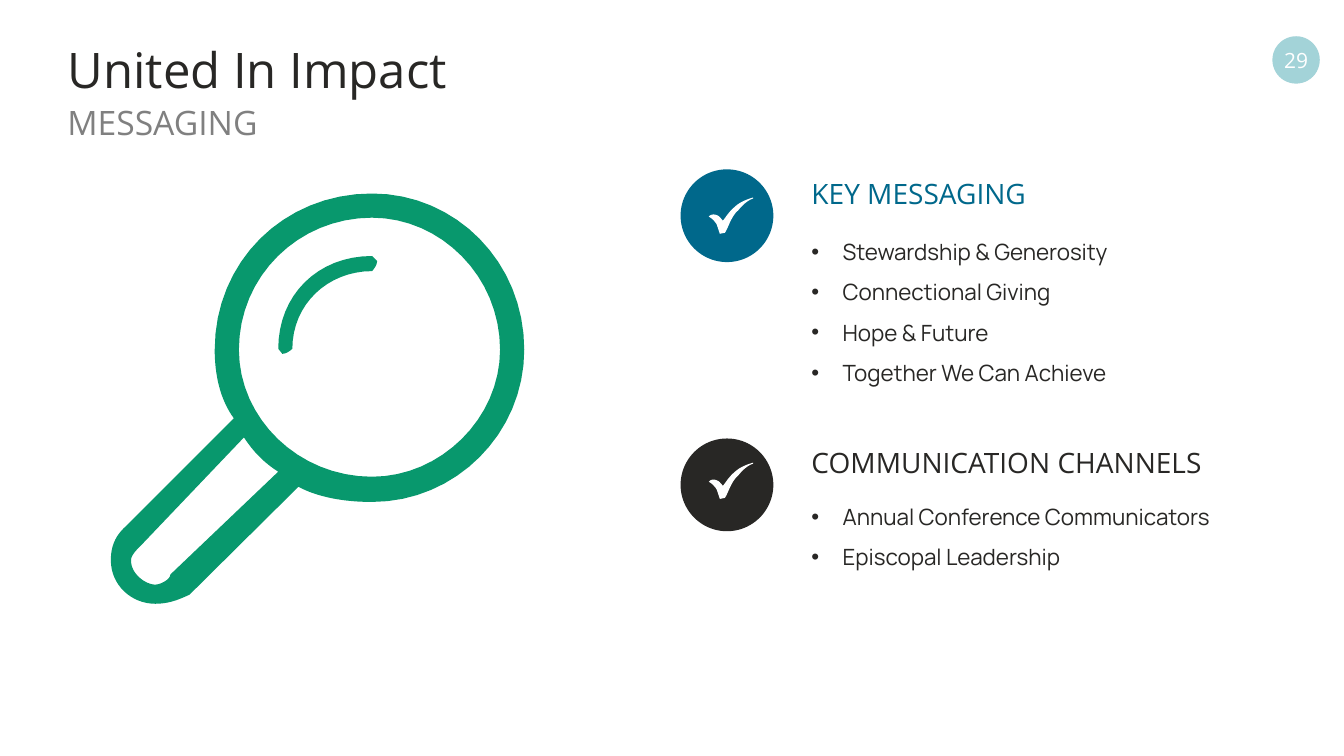
import pptx
import pptx.util
import pptx.dml.color
import pptx.enum.shapes
import pptx.enum.text
import pptx.oxml.ns
import lxml.etree

Inches = pptx.util.Inches
Pt = pptx.util.Pt
RGB = pptx.dml.color.RGBColor
ALIGN = pptx.enum.text.PP_ALIGN
ANCHOR = pptx.enum.text.MSO_ANCHOR
OVAL = pptx.enum.shapes.MSO_SHAPE.OVAL

INK = RGB(0x28, 0x27, 0x25)
BLUE = RGB(0x00, 0x68, 0x8B)
GREEN = RGB(0x08, 0x98, 0x6D)
GREY = RGB(0x80, 0x80, 0x80)
AQUA = RGB(0xA3, 0xD3, 0xD8)
WHITE = RGB(0xFF, 0xFF, 0xFF)

RIM = [
    (2.59, 0), (1.71, 0, 1.03, 0.68, 1.03, 1.55),
    (1.03, 1.79, 1.08, 2.04, 1.22, 2.23), (0.15, 3.3),
    (0.05, 3.39, 0, 3.49, 0, 3.64), (0, 3.88, 0.2, 4.07, 0.44, 4.07),
    (0.59, 4.07, 0.69, 4.02, 0.78, 3.98), (1.86, 2.91),
    (2.05, 3.01, 2.3, 3.06, 2.59, 3.06), (3.42, 3.06, 4.1, 2.38, 4.1, 1.55),
    (4.1, 0.68, 3.42, 0, 2.59, 0),
]
GRIP = [
    (0.59, 3.78), (0.59, 3.83, 0.49, 3.88, 0.44, 3.88),
    (0.35, 3.88, 0.2, 3.78, 0.2, 3.64), (0.2, 3.59, 0.25, 3.54, 0.3, 3.49),
    (1.32, 2.42), (1.42, 2.57, 1.52, 2.67, 1.66, 2.76),
]
LENS = [
    (2.59, 2.81), (1.86, 2.81, 1.27, 2.23, 1.27, 1.55),
    (1.27, 0.82, 1.86, 0.24, 2.59, 0.24), (3.27, 0.24, 3.86, 0.82, 3.86, 1.55),
    (3.86, 2.23, 3.27, 2.81, 2.59, 2.81),
]
SHINE = [
    (2.59, 0.62), (2.05, 0.62, 1.66, 1.01, 1.66, 1.54), (1.7, 1.59),
    (1.75, 1.59, 1.8, 1.54, 1.8, 1.54), (1.8, 1.1, 2.15, 0.77, 2.59, 0.77),
    (2.59, 0.77, 2.64, 0.72, 2.64, 0.67), (2.59, 0.62),
]
TICK = [
    (0.09, 0.18), (0.07, 0.17, 0.04, 0.16, 0.01, 0.18), (0, 0.19),
    (0.04, 0.21, 0.07, 0.25, 0.08, 0.27), (0.09, 0.3, 0.1, 0.33, 0.11, 0.36),
    (0.16, 0.35), (0.18, 0.32, 0.19, 0.29, 0.2, 0.27),
    (0.22, 0.22, 0.26, 0.15, 0.29, 0.13), (0.33, 0.08, 0.38, 0.03, 0.44, 0.01),
    (0.44, 0), (0.37, 0.02, 0.3, 0.05, 0.25, 0.1),
    (0.2, 0.14, 0.16, 0.21, 0.14, 0.23), (0.13, 0.22, 0.11, 0.19, 0.09, 0.18),
]


def put(item, values):
    """Set each named value on an object."""
    for name, value in values.items():
        setattr(item, name, value)


def paint(shape, color):
    """Give a shape a flat fill with no line or shadow."""
    shape.fill.solid()
    shape.fill.fore_color.rgb = color
    shape.line.fill.background()
    shape.shadow.inherit = False


def trace(steps, count=16):
    """Turn line and curve steps into a list of points."""
    points = [steps[0]]
    for step in steps[1:]:
        if len(step) == 2:
            points.append(step)
            continue
        ends = [points[-1], step[:2], step[2:4], step[4:]]
        for i in range(1, count + 1):
            t = i / count
            parts = ((1 - t) ** 3, 3 * t * (1 - t) ** 2, 3 * t * t * (1 - t), t ** 3)
            points.append(tuple(sum(w * p[k] for w, p in zip(parts, ends)) for k in (0, 1)))
    return points


def draw(slide, left, top, rings, color):
    """Draw closed rings as one filled outline."""
    paths = [[(Inches(left + x), Inches(top + y)) for x, y in trace(ring)] for ring in rings]
    build = slide.shapes.build_freeform(*paths[0][0])
    for i, points in enumerate(paths):
        if i:
            build.move_to(*points[0])
        build.add_line_segments(points[1:], close=True)
    paint(build.convert_to_shape(), color)


def disc(slide, left, top, size, color):
    """Add a filled circle."""
    shape = slide.shapes.add_shape(OVAL, *map(Inches, (left, top, size, size)))
    paint(shape, color)
    return shape


def write(frame, lines, size, color, font="Open Sans", **layout):
    """Fill a text frame with formatted paragraphs."""
    put(frame, {"word_wrap": True, "auto_size": pptx.enum.text.MSO_AUTO_SIZE.NONE})
    for i, line in enumerate(lines):
        para = frame.add_paragraph() if i else frame.paragraphs[0]
        put(para, {"alignment": ALIGN.LEFT, **layout})
        run = para.add_run()
        run.text = line
        put(run.font, {"name": font, "size": Pt(size)})
        run.font.color.rgb = color


def label(slide, box, lines, size, color, **layout):
    """Add a text box and return its frame."""
    frame = slide.shapes.add_textbox(*map(Inches, box)).text_frame
    write(frame, lines, size, color, **layout)
    return frame


def header(slide, left, top, width):
    """Place the title and the line below it."""
    title = slide.shapes.title
    put(title, {"left": Inches(left), "top": Inches(top),
                "width": Inches(width), "height": Inches(0.66)})
    title.text_frame.vertical_anchor = ANCHOR.MIDDLE
    write(title.text_frame, ["United In Impact"], 35, INK, line_spacing=0.9)
    label(slide, (left, top + 0.57, width, 0.5), ["MESSAGING"], 24, GREY)


def badge(slide, left, top, size):
    """Place the page number in its circle."""
    frame = disc(slide, left, top, size, AQUA).text_frame
    put(frame, {"vertical_anchor": ANCHOR.MIDDLE, "margin_left": 0, "margin_right": 0,
                "margin_top": 0, "margin_bottom": 0})
    write(frame, ["29"], 15, WHITE, alignment=ALIGN.CENTER)


def glass(slide, left, top):
    """Place the magnifying glass."""
    draw(slide, left, top, [RIM, GRIP, LENS], GREEN)
    draw(slide, left, top, [SHINE], GREEN)


def topic(slide, left, top, head, items, color, drop):
    """Place a ticked circle, a heading and its bullets."""
    disc(slide, left, top, 0.92, color)
    draw(slide, left + 0.28, top + drop, [TICK], WHITE)
    label(slide, (left + 1.2, top + 0.02, 4.32, 0.44), [head], 20, color)
    box = (left + 1.2, top + drop + 0.22, 4.47, 0.05 + 0.4 * len(items))
    frame = label(slide, box, items, 16, INK, font="Manrope", line_spacing=1.5)
    for para in frame.paragraphs:
        props = para._p.get_or_add_pPr()
        props.set("marL", str(Inches(0.31)))
        props.set("indent", str(Inches(-0.31)))
        face = lxml.etree.SubElement(props, pptx.oxml.ns.qn("a:buFont"))
        face.set("typeface", "Arial")
        mark = lxml.etree.SubElement(props, pptx.oxml.ns.qn("a:buChar"))
        mark.set("char", "•")


def main():
    """Build and save the slide."""
    deck = pptx.Presentation()
    put(deck, {"slide_width": Inches(13.33), "slide_height": Inches(7.5)})
    slide = deck.slides.add_slide(deck.slide_layouts[5])
    header(slide, 0.57, 0.39, 11.5)
    badge(slide, 12.62, 0.36, 0.47)
    glass(slide, 1.1, 1.92)
    topic(slide, 6.75, 1.68, "KEY MESSAGING",
          ["Stewardship & Generosity", "Connectional Giving", "Hope & Future",
           "Together We Can Achieve"], BLUE, 0.28)
    topic(slide, 6.75, 4.35, "COMMUNICATION CHANNELS",
          ["Annual Conference Communicators", "Episcopal Leadership"], INK, 0.24)
    deck.save("out.pptx")


if __name__ == "__main__":
    main()
